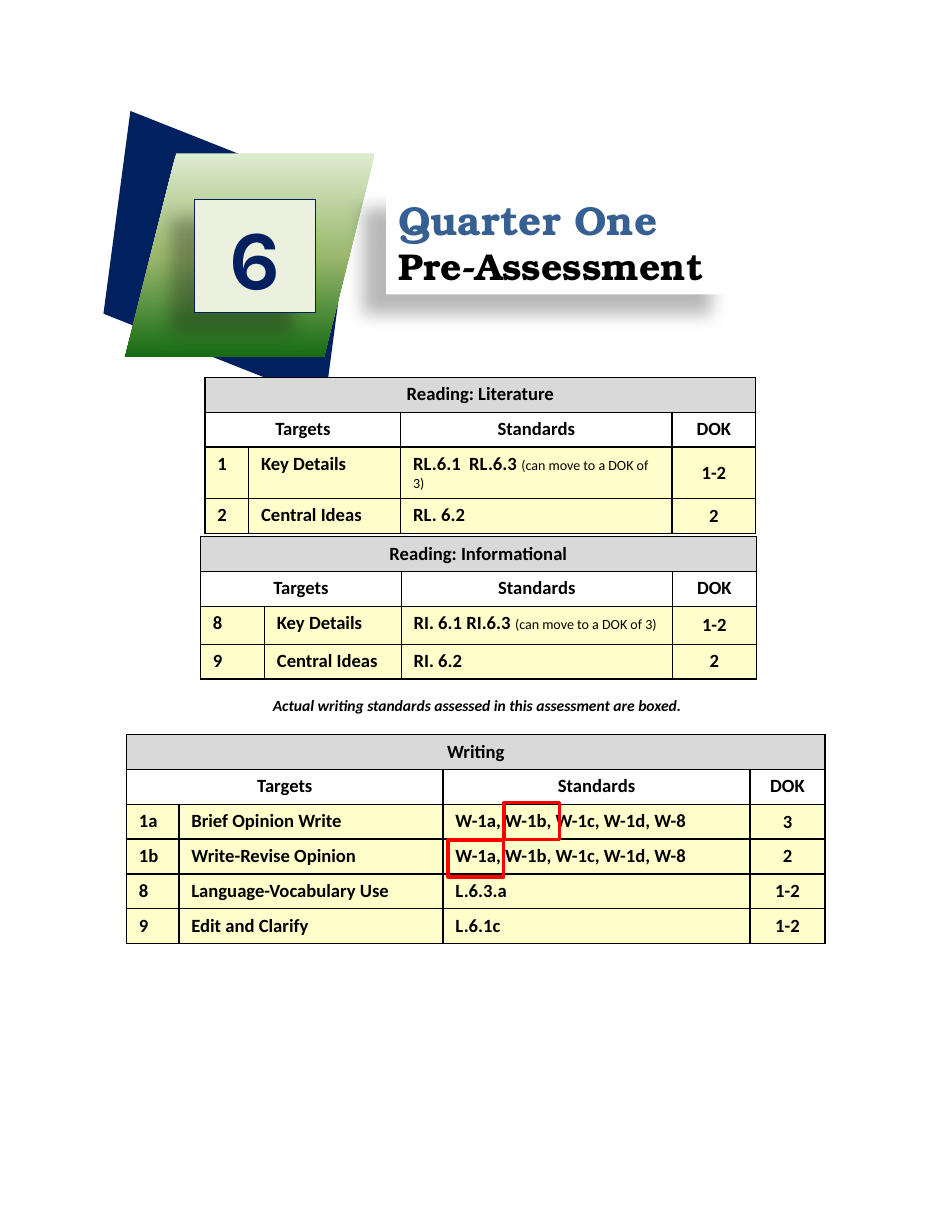
from lxml import etree
from pptx import Presentation
from pptx.dml.color import RGBColor
from pptx.enum.shapes import MSO_SHAPE
from pptx.enum.text import MSO_ANCHOR, PP_ALIGN
from pptx.oxml import parse_xml
from pptx.oxml.ns import nsdecls, qn
from pptx.util import Cm, Pt

RECT, SLANT = MSO_SHAPE.RECTANGLE, MSO_SHAPE.PARALLELOGRAM
LEFT, CENTER = PP_ALIGN.LEFT, PP_ALIGN.CENTER
TOP, MIDDLE = MSO_ANCHOR.TOP, MSO_ANCHOR.MIDDLE

NAVY, BLACK, WHITE = "002060", "000000", "FFFFFF"
GREY, CREAM, RED = "D9D9D9", "FFFFCC", "FF0000"
GREENS = [(0, "DDEBCF"), (50, "9CB86E"), (100, "156B13")]
BODY = {"name": "Calibri", "size": Pt(12), "bold": True, "color": BLACK}
SMALL = {**BODY, "size": Pt(9), "bold": False}
NOTE = {**BODY, "size": Pt(10), "italic": True}
DIGIT = {"name": "Karla", "size": Pt(54), "bold": True, "color": NAVY}
HEADING = {"name": "TeX Gyre Bonum", "bold": True}
ROW_H = 0.79


def rgb(value):
    return RGBColor.from_string(value)


def add_run(p, text, fmt):
    r = p.add_run()
    r.text = text
    for key, value in fmt.items():
        if key == "color":
            r.font.color.rgb = rgb(value)
        else:
            setattr(r.font, key, value)


def set_margins(target, x, y):
    for side, size in {"left": x, "right": x, "top": y, "bottom": y}.items():
        setattr(target, f"margin_{side}", Cm(size))


def add_block(shapes, kind, box, fill=None, line=None, weight=0.75):
    s = shapes.add_shape(kind, *map(Cm, box))
    s.shadow.inherit = False
    if fill:
        s.fill.solid()
        s.fill.fore_color.rgb = rgb(fill)
    else:
        s.fill.background()
    if line:
        s.line.color.rgb = rgb(line)
        s.line.width = Pt(weight)
    else:
        s.line.fill.background()
    return s


def add_shadow(s):
    effects = s._element.spPr.find(qn("a:effectLst"))
    effects.append(parse_xml(
        f'<a:outerShdw {nsdecls("a")} blurRad="{Pt(11.8)}" dist="{Pt(19.7)}" '
        'dir="8460000" algn="tl" rotWithShape="0"><a:srgbClr val="000000">'
        '<a:alpha val="28000"/></a:srgbClr></a:outerShdw>'))


def set_gradient(s, stops):
    gs = "".join(f'<a:gs pos="{pos * 1000}"><a:srgbClr val="{color}"/></a:gs>'
                 for pos, color in stops)
    spPr = s._element.spPr
    spPr.replace(spPr.find(qn("a:noFill")), parse_xml(
        f'<a:gradFill {nsdecls("a")} rotWithShape="1"><a:gsLst>{gs}</a:gsLst>'
        '<a:lin ang="5400000" scaled="0"/></a:gradFill>'))


def add_emblem(slide, x, y):
    shapes = slide.shapes.add_group_shape().shapes
    # Tilted navy panel
    s = add_block(shapes, SLANT, (x, y + 0.08, 6.53, 4.5), NAVY)
    s.rotation = 21.6
    s._element.spPr.find(qn("a:xfrm")).set("flipH", "1")
    # Green panel
    s = add_block(shapes, SLANT, (x + 0.94, y, 5.66, 4.62))
    set_gradient(s, GREENS)
    # Grade number
    s = add_block(shapes, RECT, (x + 2.52, y + 1.04, 2.74, 2.57), "EBF1DE", NAVY)
    add_shadow(s)
    p = s.text_frame.paragraphs[0]
    p.alignment = CENTER
    add_run(p, "6", DIGIT)


def add_title(slide, box):
    s = add_block(slide.shapes, RECT, box, WHITE)
    add_shadow(s)
    tf = s.text_frame
    tf.word_wrap = True
    tf.vertical_anchor = TOP
    set_margins(tf, 0.28, 0.15)
    lines = [("Quarter One", 26, "376092"), ("Pre-Assessment", 24, BLACK)]
    for i, (text, size, color) in enumerate(lines):
        p = tf.add_paragraph() if i else tf.paragraphs[0]
        p.alignment = LEFT
        add_run(p, text, {**HEADING, "size": Pt(size), "color": color})


def format_cell(cell, fill):
    tcPr = cell._tc.get_or_add_tcPr()
    for side in ("lnL", "lnR", "lnT", "lnB"):
        ln = etree.SubElement(tcPr, qn(f"a:{side}"), w=str(Pt(1)))
        solid = etree.SubElement(ln, qn("a:solidFill"))
        etree.SubElement(solid, qn("a:srgbClr"), val=BLACK)
    cell.fill.solid()
    cell.fill.fore_color.rgb = rgb(fill)
    set_margins(cell, 0.28, 0.13)


def add_targets(slide, x, y, cols, heading, rows, heights=None):
    """Rows hold number, target, standards, DOK; standards may carry a remark."""
    grid = [(heading, "", "", ""), ("Targets", "", "Standards", "DOK"), *rows]
    heights = heights or [ROW_H] * len(grid)
    table = slide.shapes.add_table(len(grid), len(cols), Cm(x), Cm(y),
                                   Cm(sum(cols)), Cm(sum(heights))).table
    for col, width in zip(table.columns, cols):
        col.width = Cm(width)
    for row, height in zip(table.rows, heights):
        row.height = Cm(height)
    for r, values in enumerate(grid):
        for c, value in enumerate(values):
            cell = table.cell(r, c)
            format_cell(cell, (GREY, WHITE)[r] if r < 2 else CREAM)
            cell.vertical_anchor = MIDDLE if r > 1 and c == 3 else TOP
            p = cell.text_frame.paragraphs[0]
            p.alignment = CENTER if r < 2 or c == 3 else LEFT
            parts = value if isinstance(value, tuple) else (value,)
            for text, fmt in zip(parts, (BODY, SMALL)):
                if text:
                    add_run(p, text, fmt)
    table.cell(0, 0).merge(table.cell(0, 3))
    table.cell(1, 0).merge(table.cell(1, 1))


def add_note(slide, box):
    tf = slide.shapes.add_textbox(*map(Cm, box)).text_frame
    tf.word_wrap = True
    p = tf.paragraphs[0]
    p.alignment = CENTER
    add_run(p, "Actual writing standards assessed in this assessment are boxed.", NOTE)


def main():
    prs = Presentation()
    prs.slide_width, prs.slide_height = Cm(21.59), Cm(27.94)
    slide = prs.slides.add_slide(prs.slide_layouts[6])
    remark = "(can move to a DOK of 3)"
    writing = "W-1a, W-1b, W-1c, W-1d, W-8"

    add_emblem(slide, 1.9, 3.48)
    add_targets(slide, 4.55, 12.17, (1.45, 3.1, 6.15, 1.9), "Reading: Informational", [
        ("8", "Key Details", ("RI. 6.1 RI.6.3 ", remark), "1-2"),
        ("9", "Central Ideas", "RI. 6.2", "2"),
    ], [ROW_H, ROW_H, 0.86, ROW_H])
    add_targets(slide, 2.87, 16.66, (1.19, 5.99, 6.96, 1.7), "Writing", [
        ("1a", "Brief Opinion Write", writing, "3"),
        ("1b", "Write-Revise Opinion", writing, "2"),
        ("8", "Language-Vocabulary Use", "L.6.3.a", "1-2"),
        ("9", "Edit and Clarify", "L.6.1c", "1-2"),
    ])
    add_title(slide, (8.76, 4.27, 7.9, 2.41))
    add_targets(slide, 4.65, 8.56, (0.99, 3.45, 6.15, 1.9), "Reading: Literature", [
        ("1", "Key Details", ("RL.6.1  RL.6.3 ", remark), "1-2"),
        ("2", "Central Ideas", "RL. 6.2", "2"),
    ])
    # Boxes around the assessed writing standards
    for x, y in ((11.43, 18.21), (10.16, 19.05)):
        add_block(slide.shapes, RECT, (x, y, 1.27, 0.84), line=RED, weight=2)
    add_note(slide, (2.24, 15.67, 17.15, 0.69))
    prs.save("out.pptx")


if __name__ == "__main__":
    main()
